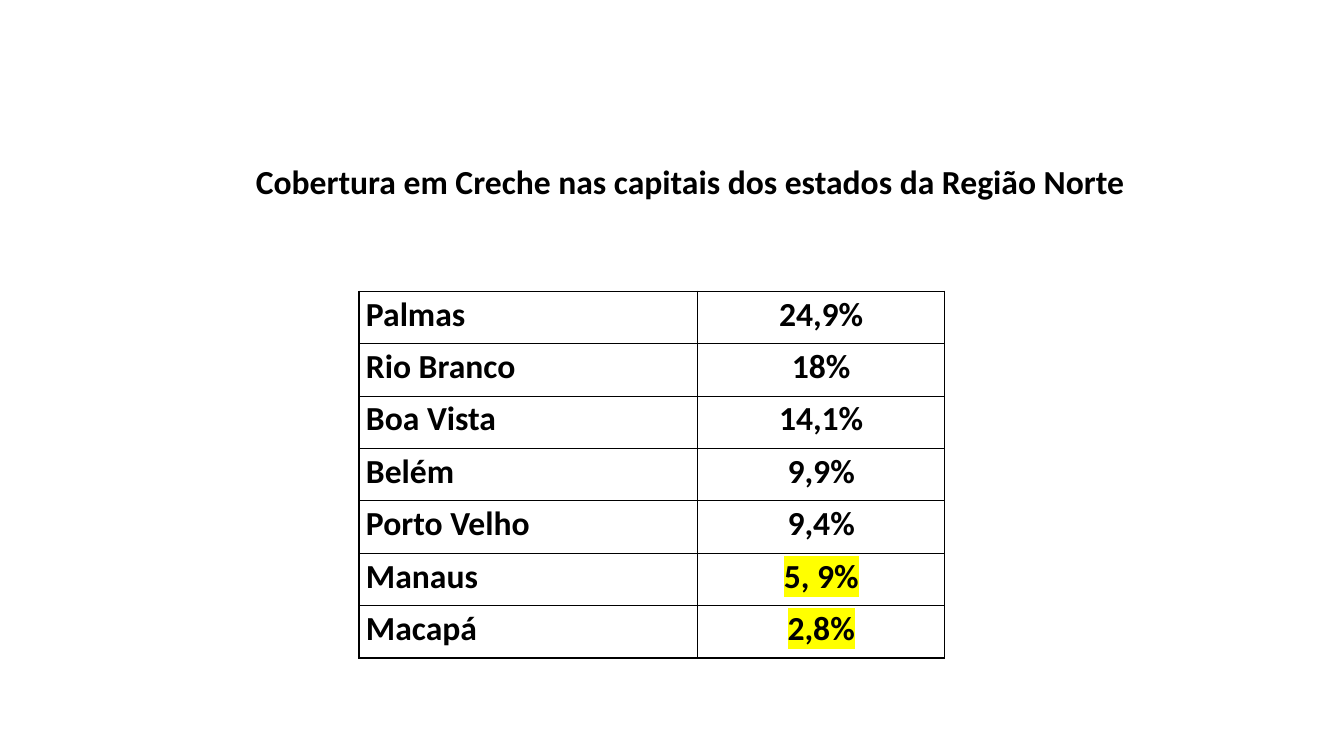
from dataclasses import dataclass

import lxml.etree
import pptx
import pptx.dml.color
import pptx.enum.text
import pptx.oxml.ns
import pptx.util

Inches = pptx.util.Inches
Align = pptx.enum.text.PP_ALIGN
qn = pptx.oxml.ns.qn

COLORS = {"text": "000000", "paper": "FFFFFF", "border": "000000", "highlight": "FFFF00"}


@dataclass
class Capital:
    name: str
    coverage: str
    highlighted: bool = False


CAPITALS = [
    Capital("Palmas", "24,9%"),
    Capital("Rio Branco", "18%"),
    Capital("Boa Vista", "14,1%"),
    Capital("Belém", "9,9%"),
    Capital("Porto Velho", "9,4%"),
    Capital("Manaus", "5, 9%", True),
    Capital("Macapá", "2,8%", True),
]


def rgb(name: str) -> pptx.dml.color.RGBColor:
    return pptx.dml.color.RGBColor.from_string(COLORS[name])


def add_color(parent, tag: str, name: str):
    """Append a colour-holding element and return it."""
    holder = lxml.etree.SubElement(parent, qn(tag))
    lxml.etree.SubElement(holder, qn("a:srgbClr"), val=COLORS[name])
    return holder


def write_text(frame, text: str, *, align, spacing: float = 1.0, highlighted: bool = False) -> None:
    paragraph = frame.paragraphs[0]
    paragraph.alignment = align
    paragraph.line_spacing = spacing
    run = paragraph.add_run()
    run.text = text
    run.font.size = pptx.util.Pt(24)
    run.font.bold = True
    run.font.color.rgb = rgb("text")
    if highlighted:
        add_color(run.font._element, "a:highlight", "highlight")
    run.font.name = "Calibri"


def format_cell(cell) -> None:
    cell.margin_left = cell.margin_right = Inches(0.07)
    cell.margin_top = cell.margin_bottom = 0
    properties = cell._tc.get_or_add_tcPr()
    for side in ("a:lnL", "a:lnR", "a:lnT", "a:lnB"):
        border = lxml.etree.SubElement(properties, qn(side), w=str(pptx.util.Pt(1)))
        add_color(border, "a:solidFill", "border")
    cell.fill.solid()
    cell.fill.fore_color.rgb = rgb("paper")


def add_heading(slide) -> None:
    heading = slide.shapes.title
    heading.left, heading.top = Inches(1.8), Inches(1.5)
    heading.width, heading.height = Inches(10.09), Inches(0.6)
    heading.text_frame.vertical_anchor = pptx.enum.text.MSO_ANCHOR.MIDDLE
    write_text(heading.text_frame, "Cobertura em Creche nas capitais dos estados da Região Norte",
               align=Align.CENTER)


def add_coverage_table(slide) -> None:
    row_height = Inches(0.52)
    coverage = slide.shapes.add_table(len(CAPITALS), 2, Inches(3.56), Inches(2.89),
                                      Inches(5.81), row_height * len(CAPITALS)).table
    coverage.first_row = coverage.horz_banding = False
    coverage.columns[0].width = Inches(3.36)
    coverage.columns[1].width = Inches(2.45)
    for row, capital in enumerate(CAPITALS):
        coverage.rows[row].height = row_height
        name_cell, value_cell = coverage.cell(row, 0), coverage.cell(row, 1)
        format_cell(name_cell)
        format_cell(value_cell)
        write_text(name_cell.text_frame, capital.name, align=Align.JUSTIFY, spacing=1.07)
        write_text(value_cell.text_frame, capital.coverage, align=Align.CENTER, spacing=1.07,
                   highlighted=capital.highlighted)


def main() -> None:
    presentation = pptx.Presentation()
    presentation.slide_width, presentation.slide_height = Inches(13.33), Inches(7.5)
    slide = presentation.slides.add_slide(presentation.slide_layouts[5])
    # Heading above the table
    add_heading(slide)
    # Coverage by state capital
    add_coverage_table(slide)
    presentation.save("out.pptx")


if __name__ == "__main__":
    main()
